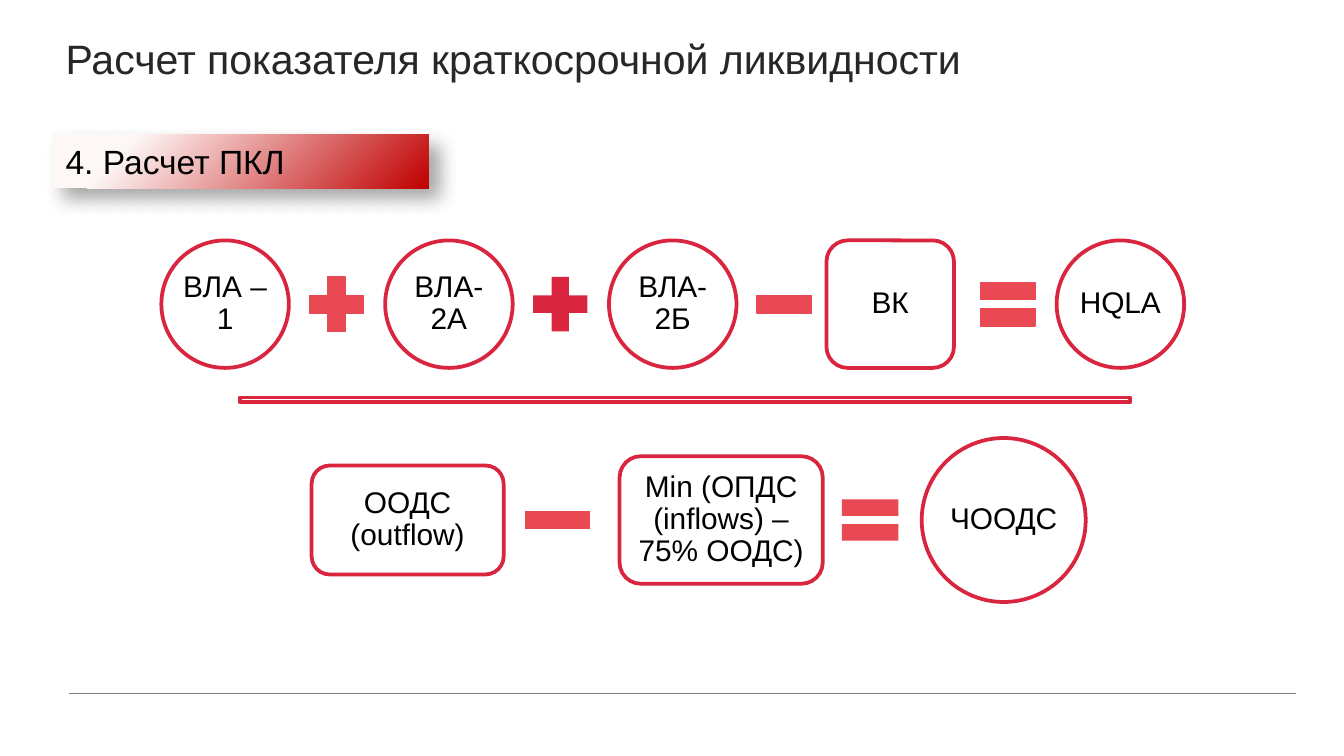
from lxml import etree
from pptx import Presentation
from pptx import util as u
from pptx.dml.color import RGBColor
from pptx.enum import shapes, text
from pptx.oxml import parse_xml
from pptx.oxml.ns import nsdecls, qn

Cm, Pt = u.Cm, u.Pt
GEOM = shapes.MSO_SHAPE
OVAL, BOX = GEOM.OVAL, GEOM.FLOWCHART_ALTERNATE_PROCESS
PLUS, MINUS, EQUAL = GEOM.MATH_PLUS, GEOM.MATH_MINUS, GEOM.MATH_EQUAL

WHITE = RGBColor(0xFF, 0xFF, 0xFF)
BLACK = RGBColor(0, 0, 0)
DARK = RGBColor(0x27, 0x27, 0x27)
GREY = RGBColor(0x80, 0x80, 0x80)
RED = RGBColor(0xD9, 0x25, 0x3E)
CORAL = RGBColor(0xE9, 0x49, 0x52)
PALE = RGBColor(0xFD, 0xF7, 0xF6)
DEEP_RED = RGBColor(0xC0, 0, 0)


def add_text(tf, words, size, color, align=text.PP_ALIGN.LEFT):
    tf.word_wrap = True
    p = tf.paragraphs[0]
    p.alignment = align
    r = p.add_run()
    r.text = words
    r.font.name = "Arial"
    r.font.size = Pt(size)
    r.font.color.rgb = color
    return p


def add_figure(s, kind, left, middle, width, height, fill, line=None, weight=2):
    """Place a preset shape by its left edge and vertical middle, in cm."""
    sp = s.shapes.add_shape(kind, Cm(left), Cm(middle - height / 2),
                            Cm(width), Cm(height))
    sp.shadow.inherit = False
    sp.fill.solid()
    sp.fill.fore_color.rgb = fill
    if line is None:
        sp.line.fill.background()
    else:
        sp.line.color.rgb = line
        sp.line.width = Pt(weight)
    return sp


def add_term(s, kind, left, middle, width, height, words):
    sp = add_figure(s, kind, left, middle, width, height, WHITE, RED)
    tf = sp.text_frame
    tf.margin_left = tf.margin_right = tf.margin_top = tf.margin_bottom = Cm(0.05)
    tf.vertical_anchor = text.MSO_ANCHOR.MIDDLE
    p = add_text(tf, words, 16, BLACK, text.PP_ALIGN.CENTER)
    p.line_spacing = 0.9


def add_title(s, words):
    sp = s.shapes.add_textbox(Cm(0.99), Cm(0.51), Cm(23.4), Cm(1.5))
    add_text(sp.text_frame, words, 22, DARK)


def add_banner(s, words):
    sp = add_figure(s, GEOM.RECTANGLE, 0.99, 3.05, 7.11, 1.02, PALE)
    sp.fill.gradient()
    sp.fill.gradient_angle = 315
    for stop, place, color in zip(sp.fill.gradient_stops, (0.2, 1), (PALE, DEEP_RED)):
        stop.position = place
        stop.color.rgb = color
    # Soft shadow to the lower right
    effects = sp._element.spPr.find(qn("a:effectLst"))
    effects.append(parse_xml(
        f'<a:outerShdw {nsdecls("a")} blurRad="{Pt(10.2)}" dist="{Pt(8)}" '
        'dir="2700000" algn="tl" rotWithShape="0"><a:srgbClr val="000000">'
        '<a:alpha val="35000"/></a:srgbClr></a:outerShdw>'))
    sp.text_frame.vertical_anchor = text.MSO_ANCHOR.TOP
    add_text(sp.text_frame, words, 18, BLACK)


def add_footer_line(s):
    line = s.shapes.add_connector(shapes.MSO_CONNECTOR.STRAIGHT,
                                  Cm(1.3), Cm(13.11), Cm(24.49), Cm(13.11))
    line.line.color.rgb = GREY
    line.line.width = Pt(0.3)
    etree.SubElement(line._element.spPr, qn("a:effectLst"))


def add_numerator(s):
    middle, start, step, size = 5.75, 3.05, 4.23, 2.41
    terms = ["ВЛА – 1", "ВЛА-2А", "ВЛА-2Б", "ВК", "HQLA"]
    for i, words in enumerate(terms):
        if words == "ВК":  # the deduction sits closer to its minus sign
            add_term(s, BOX, 15.62, middle, size, size, words)
        else:
            add_term(s, OVAL, start + i * step, middle, size, size, words)
    signs = [(PLUS, CORAL, CORAL), (PLUS, RED, None),
             (MINUS, CORAL, CORAL), (EQUAL, CORAL, CORAL)]
    for i, (kind, fill, line) in enumerate(signs):
        add_figure(s, kind, 5.66 + i * step, middle, 1.4, 1.4, fill, line, 0.75)


def add_denominator(s):
    middle = 9.83
    add_term(s, BOX, 5.89, middle, 3.63, 2.06, "ООДС (outflow)")
    add_figure(s, MINUS, 9.7, middle, 1.68, 1.47, CORAL)
    add_term(s, BOX, 11.71, middle, 3.84, 2.41, "Min (ОПДС (inflows) – 75% ООДС)")
    add_figure(s, EQUAL, 15.72, middle, 1.45, 1.32, CORAL)
    add_term(s, OVAL, 17.42, middle, 3.1, 3.1, "ЧООДС")


def main():
    prs = Presentation()
    prs.slide_width, prs.slide_height = Cm(25.4), Cm(14.29)
    s = prs.slides.add_slide(prs.slide_layouts[6])

    # Frame and headings
    add_footer_line(s)
    add_title(s, "Расчет показателя краткосрочной ликвидности")
    add_banner(s, "4. Расчет ПКЛ")

    # Formula: numerator, fraction bar, denominator
    add_numerator(s)
    add_figure(s, MINUS, 1.5, 7.56, 22.89, 0.38, WHITE, RED)
    add_denominator(s)

    prs.save("out.pptx")


if __name__ == "__main__":
    main()
